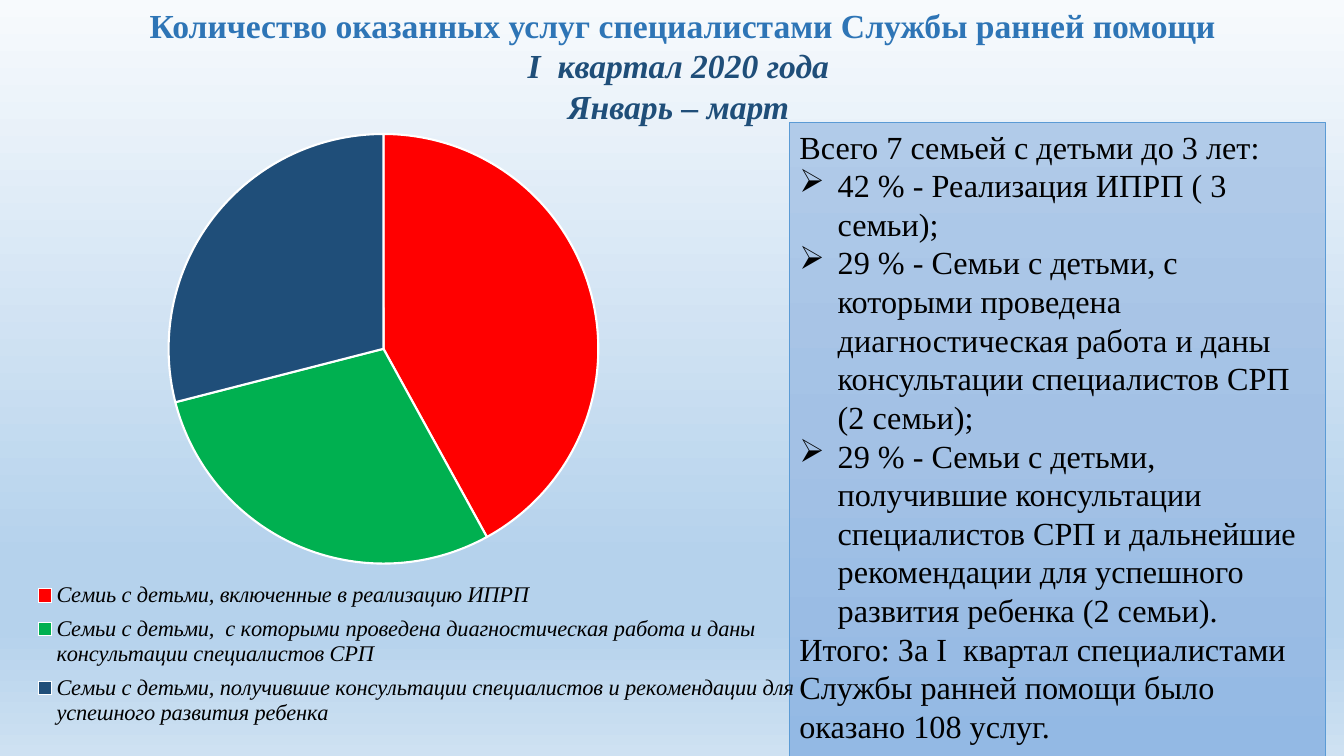
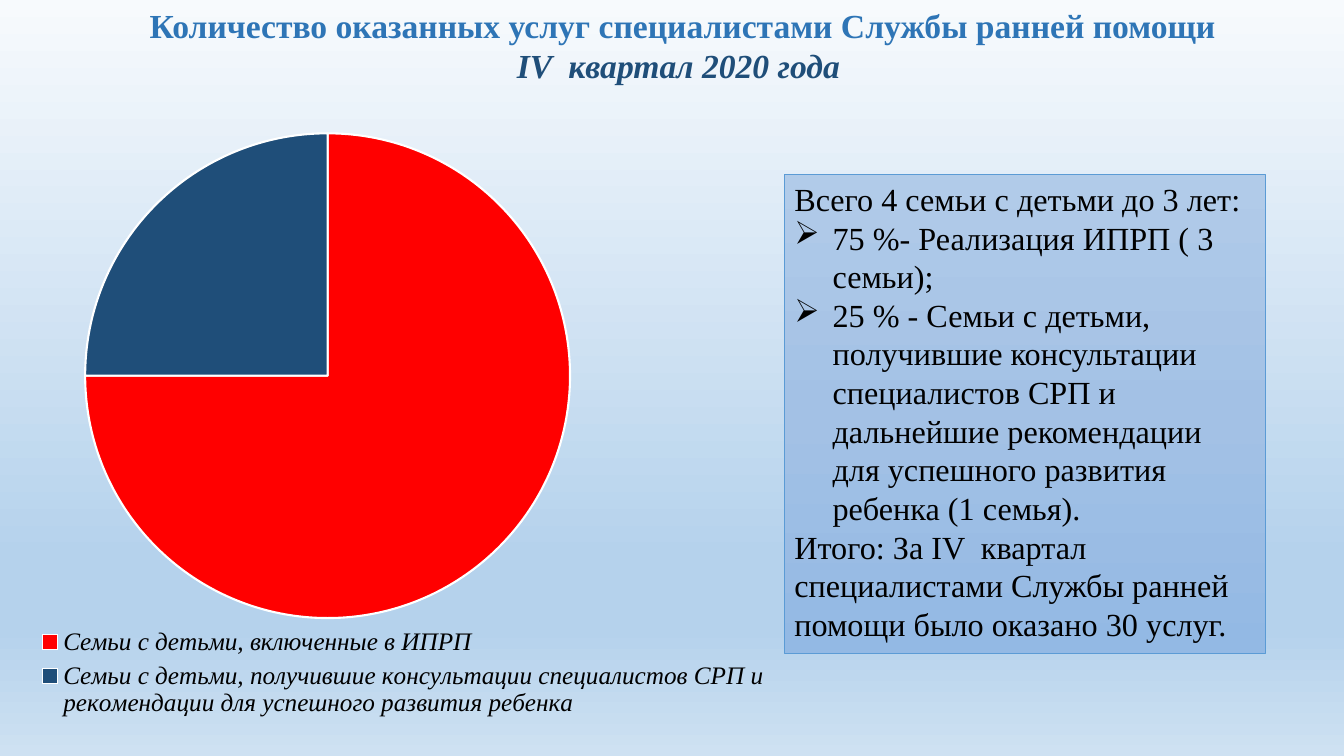
"""Build two slides on early-help services by quarter, each with a pie chart and a summary panel."""
from pptx import Presentation, util as u
from pptx.chart.data import CategoryChartData
from pptx.dml.color import RGBColor
from pptx.enum import chart as charts, shapes, text
from pptx.oxml import parse_xml
from pptx.oxml.ns import nsdecls, qn

SERIF = "Times New Roman"
RED, GREEN, NAVY = "FF0000", "00B050", "1F4E79"
BLUE, EDGE, BLACK, WHITE = "2E75B6", "5B9BD5", "000000", "FFFFFF"
SKY = [(0, "F7FAFD"), (74, "B5D2EC"), (83, "B5D2EC"), (100, "CEE1F2")]
PANEL = [(0, "B1CBE9"), (50, "A3C1E5"), (100, "93B9E4")]
HEADING = "Количество оказанных услуг специалистами Службы ранней помощи"
BULLET_INDENT = u.Inches(0.38)

SLIDES = [
    {
        "period": ["I  квартал 2020 года ", "Январь – март "],
        "panel": (7.83, 1.21, 5.32, 6.29),
        "intro": "Всего 7 семьей с детьми до 3 лет:",
        "bullets": [
            "42 % - Реализация ИПРП ( 3 семьи);",
            "29 % - Семьи с детьми, с которыми проведена диагностическая работа и даны "
            "консультации специалистов СРП (2 семьи);",
            "29 % - Семьи с детьми, получившие консультации  специалистов СРП и дальнейшие "
            "рекомендации для успешного развития ребенка (2 семьи).",
        ],
        "total": "Итого: За I  квартал специалистами Службы ранней помощи было оказано 108 услуг.",
        "chart": (-0.5, 0.66, 8.9, 7.2),
        "plot": (0.244, 0.093, 0.479, 0.592),
        "legend": (0.09, 0.7, 0.86, 0.22),
        "legend_size": 16,
        "slices": [
            ("Семиь с детьми, включенные в реализацию ИПРП", 42, RED),
            ("Семьи с детьми,  с которыми проведена диагностическая работа и даны "
             "консультации специалистов СРП", 29, GREEN),
            ("Семьи с детьми, получившие консультации специалистов и рекомендации для "
             "успешного развития ребенка", 29, NAVY),
        ],
    },
    {
        "period": ["IV  квартал 2020 года "],
        "panel": (7.78, 1.73, 4.77, 4.75),
        "intro": "Всего 4 семьи с детьми до 3 лет:",
        "bullets": [
            "75 %- Реализация ИПРП ( 3 семьи);",
            "25 % - Семьи с детьми, получившие консультации специалистов СРП и дальнейшие "
            "рекомендации для успешного развития ребенка (1 семья).",
        ],
        "total": "Итого: За IV  квартал специалистами Службы ранней помощи было оказано 30 услуг.",
        "chart": (0, 0.94, 8.89, 6.3),
        "plot": (0.095, 0.037, 0.541, 0.811),
        "legend": (0.045, 0.83, 0.81, 0.16),
        "legend_size": 18,
        "slices": [
            ("Семьи с детьми, включенные в ИПРП", 75, RED),
            ("Семьи с детьми, получившие консультации специалистов СРП и рекомендации для "
             "успешного развития ребенка", 25, NAVY),
        ],
    },
]

color = RGBColor.from_string


def paint_gradient(fill, element, stops):
    fill.gradient()
    fill.gradient_angle = 270
    stop_list = element.xpath(".//a:gradFill/a:gsLst")[0]
    for stop in list(stop_list):
        stop_list.remove(stop)
    for share, value in stops:
        stop_list.append(parse_xml(
            f'<a:gs {nsdecls("a")} pos="{share * 1000}"><a:srgbClr val="{value}"/></a:gs>'))


def place_before(anchor, area, target=""):
    parent = anchor.getparent()
    for old in parent.findall(qn("c:layout")):
        parent.remove(old)
    places = "".join(f'<c:{key} val="{share}"/>' for key, share in zip("xywh", area))
    anchor.addprevious(parse_xml(
        f'<c:layout {nsdecls("c")}><c:manualLayout>{target}<c:xMode val="edge"/>'
        f'<c:yMode val="edge"/>{places}</c:manualLayout></c:layout>'))


deck = Presentation()
deck.slide_width, deck.slide_height = u.Inches(13.33), u.Inches(7.5)

for content in SLIDES:
    page = deck.slides.add_slide(deck.slide_layouts[6])
    paint_gradient(page.background.fill, page._element, SKY)

    title = page.shapes.add_textbox(*map(u.Inches, (1.37, 0, 10.8, 1.31)))
    title.text_frame.word_wrap = True
    title.text_frame.text = "\n".join([HEADING] + content["period"])
    for row, para in enumerate(title.text_frame.paragraphs):
        para.alignment = text.PP_ALIGN.CENTER
        font = para.runs[0].font
        font.name, font.size, font.bold = SERIF, u.Pt(24), True
        font.italic = row > 0
        font.color.rgb = color(NAVY if row else BLUE)

    panel = page.shapes.add_shape(
        shapes.MSO_SHAPE.RECTANGLE, *map(u.Inches, content["panel"]))
    panel.shadow.inherit = False
    paint_gradient(panel.fill, panel._element, PANEL)
    panel.line.color.rgb = color(EDGE)
    panel.line.width = u.Pt(0.5)
    frame = panel.text_frame
    frame.word_wrap = True
    frame.vertical_anchor = text.MSO_ANCHOR.TOP
    frame.text = "\n".join([content["intro"], *content["bullets"], content["total"]])
    for para in frame.paragraphs:
        para.alignment = text.PP_ALIGN.LEFT
        font = para.runs[0].font
        font.name, font.size = SERIF, u.Pt(23)
        font.color.rgb = color(BLACK)
    for para in frame.paragraphs[1:-1]:
        properties = para._p.get_or_add_pPr()
        properties.set("marL", str(BULLET_INDENT))
        properties.set("indent", str(-BULLET_INDENT))
        properties.append(parse_xml(f'<a:buChar {nsdecls("a")} char="➢"/>'))

    names, values, fills = zip(*content["slices"])
    data = CategoryChartData()
    data.categories = names
    data.add_series("Series 1", values)
    chart = page.shapes.add_chart(
        charts.XL_CHART_TYPE.PIE, *map(u.Inches, content["chart"]), data).chart
    chart.has_title = False
    chart.font.name, chart.font.size = "Calibri", u.Pt(10)
    chart.font.color.rgb = color(BLACK)
    pie = chart.plots[0]
    pie.vary_by_categories = True
    for index, value in enumerate(fills):
        form = pie.series[0].points[index].format
        form.fill.solid()
        form.fill.fore_color.rgb = color(value)
        form.line.color.rgb = color(WHITE)
        form.line.width = u.Pt(1.5)
    place_before(pie._element, content["plot"], '<c:layoutTarget val="inner"/>')

    chart.has_legend = True
    legend = chart.legend
    legend.position = charts.XL_LEGEND_POSITION.BOTTOM
    legend.include_in_layout = False
    legend.font.name, legend.font.size = SERIF, u.Pt(content["legend_size"])
    legend.font.italic = True
    legend.font.color.rgb = color(BLACK)
    place_before(legend._element.find(qn("c:overlay")), content["legend"])

deck.save("out.pptx")
